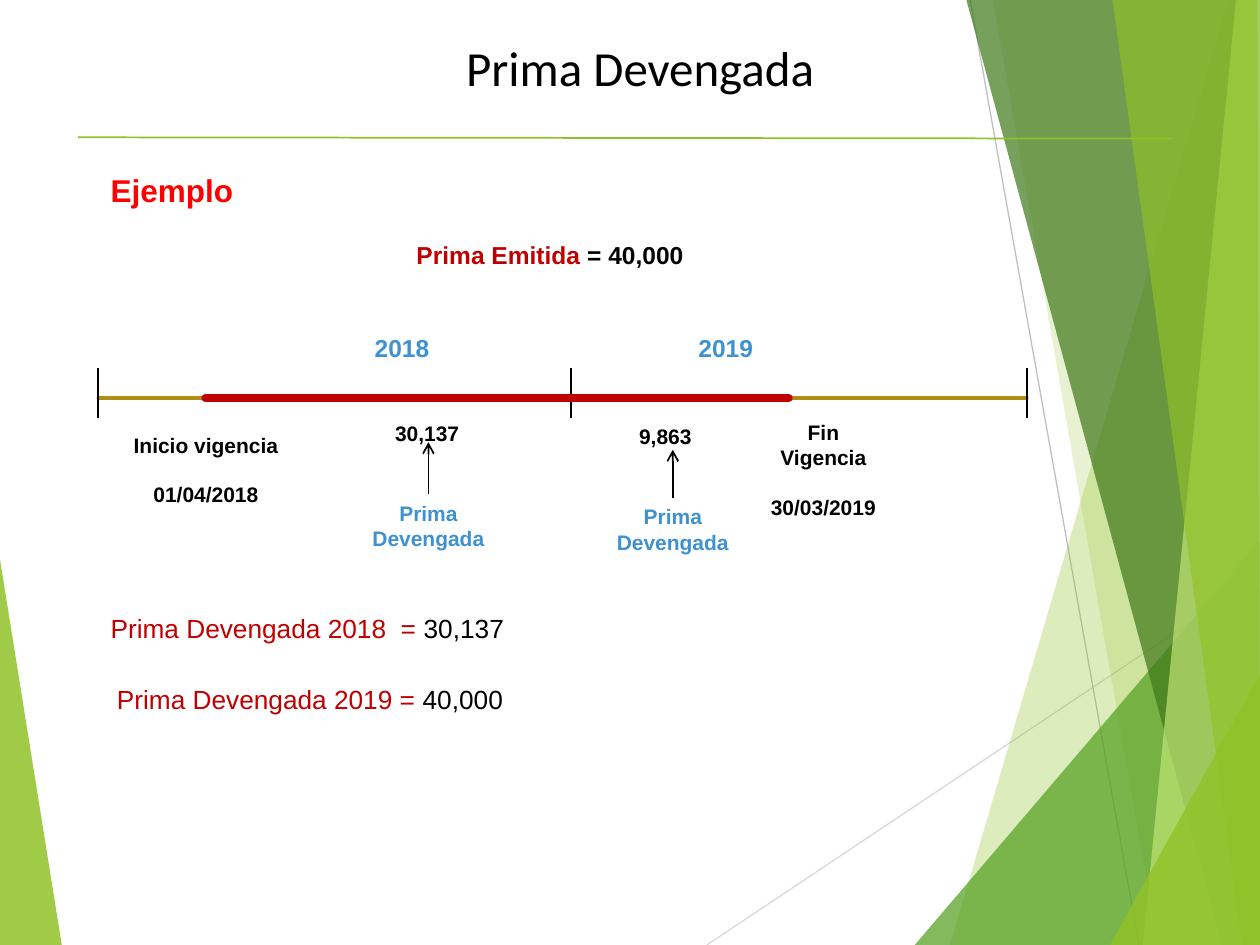
from dataclasses import dataclass

import pptx
import pptx.dml.color
import pptx.enum.shapes
import pptx.enum.text
import pptx.oxml
import pptx.oxml.ns
import pptx.util

ALIGN = pptx.enum.text.PP_ALIGN
COLUMNS, ROWS = 100, 75


@dataclass(frozen=True)
class Theme:
    heading_font: str = "Calibri"
    body_font: str = "Arial"
    black: str = "000000"
    red: str = "FF0000"
    dark_red: str = "C00000"
    blue: str = "3F92D1"
    gold: str = "AF8C14"
    lime: str = "90C226"
    pale_lime: str = "C0E474"
    green: str = "54A021"
    dark_green: str = "3F7819"
    light_gray: str = "D9D9D9"
    gray: str = "BFBFBF"
    title_size: int = 28
    subtitle_size: int = 18
    result_size: int = 15
    heading_size: int = 14
    label_size: int = 12
    label_gap: int = 14


def rgb(color):
    return pptx.dml.color.RGBColor.from_string(color)


def add_child(parent, tag, **attributes):
    child = pptx.oxml.parse_xml(f"<a:{tag} {pptx.oxml.ns.nsdecls('a')}/>")
    for name, value in attributes.items():
        child.set(name, value)
    parent.append(child)


class SlideBuilder:
    """Draws on one slide; lengths are columns and rows of the grid."""

    def __init__(self, presentation, theme):
        self.theme = theme
        self.column = presentation.slide_width / COLUMNS
        self.row = presentation.slide_height / ROWS
        self.slide = presentation.slides.add_slide(presentation.slide_layouts[5])

    def x(self, columns):
        return pptx.util.Emu(round(columns * self.column))

    def y(self, rows):
        return pptx.util.Emu(round(rows * self.row))

    def line(self, start, end, color, width=1, arrow=False, rounded=False):
        connector = self.slide.shapes.add_connector(
            pptx.enum.shapes.MSO_CONNECTOR.STRAIGHT,
            self.x(start[0]), self.y(start[1]), self.x(end[0]), self.y(end[1]))
        connector.line.color.rgb = rgb(color)
        connector.line.width = pptx.util.Pt(width)
        outline = connector._element.spPr.find(pptx.oxml.ns.qn("a:ln"))
        if rounded:
            outline.set("cap", "rnd")
        if arrow:
            add_child(outline, "tailEnd", type="arrow")
        add_child(connector._element.spPr, "effectLst")

    def facet(self, points, color, opacity):
        """Add a translucent polygon without an outline."""
        corners = [(self.x(column), self.y(row)) for column, row in points]
        builder = self.slide.shapes.build_freeform(*corners[0])
        builder.add_line_segments(corners[1:], close=True)
        shape = builder.convert_to_shape()
        shape.shadow.inherit = False
        shape.fill.solid()
        shape.fill.fore_color.rgb = rgb(color)
        shape.line.fill.background()
        color_element = shape._element.spPr.find(".//" + pptx.oxml.ns.qn("a:srgbClr"))
        add_child(color_element, "alpha", val=str(opacity * 1000))

    def add_runs(self, paragraph, runs, size, font, bold, align):
        paragraph.alignment = align
        for text, color in runs:
            run = paragraph.add_run()
            run.text = text
            run.font.name = font
            run.font.size = pptx.util.Pt(size)
            run.font.bold = bold
            run.font.color.rgb = rgb(color)

    def title(self, text, left, top, width, height):
        """Fill the title placeholder and bring it in front of what is drawn so far."""
        shape = self.slide.shapes.title
        shape.left, shape.top = self.x(left), self.y(top)
        shape.width, shape.height = self.x(width), self.y(height)
        frame = shape.text_frame
        frame.auto_size = pptx.enum.text.MSO_AUTO_SIZE.NONE
        frame.vertical_anchor = pptx.enum.text.MSO_ANCHOR.TOP
        self.add_runs(frame.paragraphs[0], [(text, self.theme.black)], self.theme.title_size,
                      self.theme.heading_font, False, ALIGN.CENTER)
        self.slide.shapes._spTree.append(shape._element)

    def text(self, left, top, width, height, paragraphs, size, bold=True,
             align=ALIGN.CENTER, gap_before_last=0):
        """Add a text box; each paragraph is a list of (text, color) runs."""
        box = self.slide.shapes.add_textbox(
            self.x(left), self.y(top), self.x(width), self.y(height))
        frame = box.text_frame
        frame.word_wrap = True
        for index, runs in enumerate(paragraphs):
            paragraph = frame.add_paragraph() if index else frame.paragraphs[0]
            self.add_runs(paragraph, runs, size, self.theme.body_font, bold, align)
        if gap_before_last:
            frame.paragraphs[-1].space_before = pptx.util.Pt(gap_before_last)


def draw_background(builder, theme):
    builder.facet([(0, 44.4), (4.9, 75), (0, 75)], theme.lime, 85)
    builder.line((56.1, 75), (100, 45.7), theme.light_gray, 0.75)
    builder.line((77, 0), (90.4, 75), theme.gray, 0.75)
    facets = [
        ([(97.5, 0), (75.4, 75), (100, 75), (100, 0)], theme.lime, 30),
        ([(78.8, 0), (91.9, 75), (100, 75), (100, 0)], theme.lime, 20),
        ([(72.6, 75), (100, 42.9), (100, 75)], theme.green, 72),
        ([(76.7, 0), (97, 75), (100, 75), (100, 0)], theme.dark_green, 70),
        ([(98.1, 0), (90.7, 75), (100, 75), (100, 0)], theme.pale_lime, 70),
        ([(88.3, 0), (98.6, 75), (100, 75), (99.8, 0)], theme.lime, 65),
        ([(88.1, 75), (100, 53.5), (100, 75)], theme.lime, 80),
    ]
    for points, color, opacity in facets:
        builder.facet(points, color, opacity)


def draw_timeline(builder, theme):
    axis, start, middle, end = 31.6, 7.8, 45.3, 81.5
    builder.line((start, axis), (end, axis), theme.gold, 2, rounded=True)
    for tick in (start, middle, end):
        builder.line((tick, 29.2), (tick, 33.2), theme.black)
    for year, left in (("2018", 26.8), ("2019", 52.5)):
        builder.text(left, 25.9, 10.2, 3.4, [[(year, theme.blue)]], theme.heading_size)
    builder.line((16.3, axis), (62.6, axis), theme.dark_red, 4.5, rounded=True)

    limits = [
        (8.7, 33.8, 15.3, 7.1, ["Inicio vigencia", "01/04/2018"]),
        (59.5, 32.8, 11.7, 9.1, ["Fin", "Vigencia", "30/03/2019"]),
    ]
    for left, top, width, height, lines in limits:
        builder.text(left, top, width, height, [[(line, theme.black)] for line in lines],
                     theme.label_size, gap_before_last=theme.label_gap)

    earned = [
        ("30,137", 33.9, 32.9, 34, 39.2, 35.1, 12.9),
        ("9,863", 52.8, 33.1, 53.4, 39.5, 35.7, 12.1),
    ]
    for amount, amount_center, amount_top, center, label_top, arrow_tip, width in earned:
        builder.text(amount_center - 5.1, amount_top, 10.2, 3,
                     [[(amount, theme.black)]], theme.label_size)
        builder.text(center - width / 2, label_top, width, 5,
                     [[("Prima Devengada", theme.blue)]], theme.label_size)
        builder.line((center, label_top), (center, arrow_tip), theme.black, arrow=True)


def main():
    presentation = pptx.Presentation()
    presentation.slide_width = pptx.util.Inches(10)
    presentation.slide_height = pptx.util.Inches(7.5)
    theme = Theme()
    builder = SlideBuilder(presentation, theme)

    draw_background(builder, theme)
    builder.title("Prima Devengada", 14.1, 2.5, 73.4, 5.7)
    builder.line((6.2, 10.9), (93, 11), theme.lime)
    builder.text(7.8, 13.1, 71.7, 4, [[("Ejemplo", theme.red)]],
                 theme.subtitle_size, align=ALIGN.JUSTIFY)
    builder.text(30.2, 18.6, 26.9, 3.4,
                 [[("Prima Emitida ", theme.dark_red), ("= 40,000", theme.black)]],
                 theme.heading_size)
    draw_timeline(builder, theme)

    results = [
        (7.8, 48.1, "Prima Devengada 2018  = ", "30,137"),
        (8.3, 53.7, "Prima Devengada 2019 = ", "40,000"),
    ]
    for left, top, label, amount in results:
        builder.text(left, top, 71.7, 3.5, [[(label, theme.dark_red), (amount, theme.black)]],
                     theme.result_size, bold=False, align=ALIGN.JUSTIFY)
    presentation.save("out.pptx")


if __name__ == "__main__":
    main()
